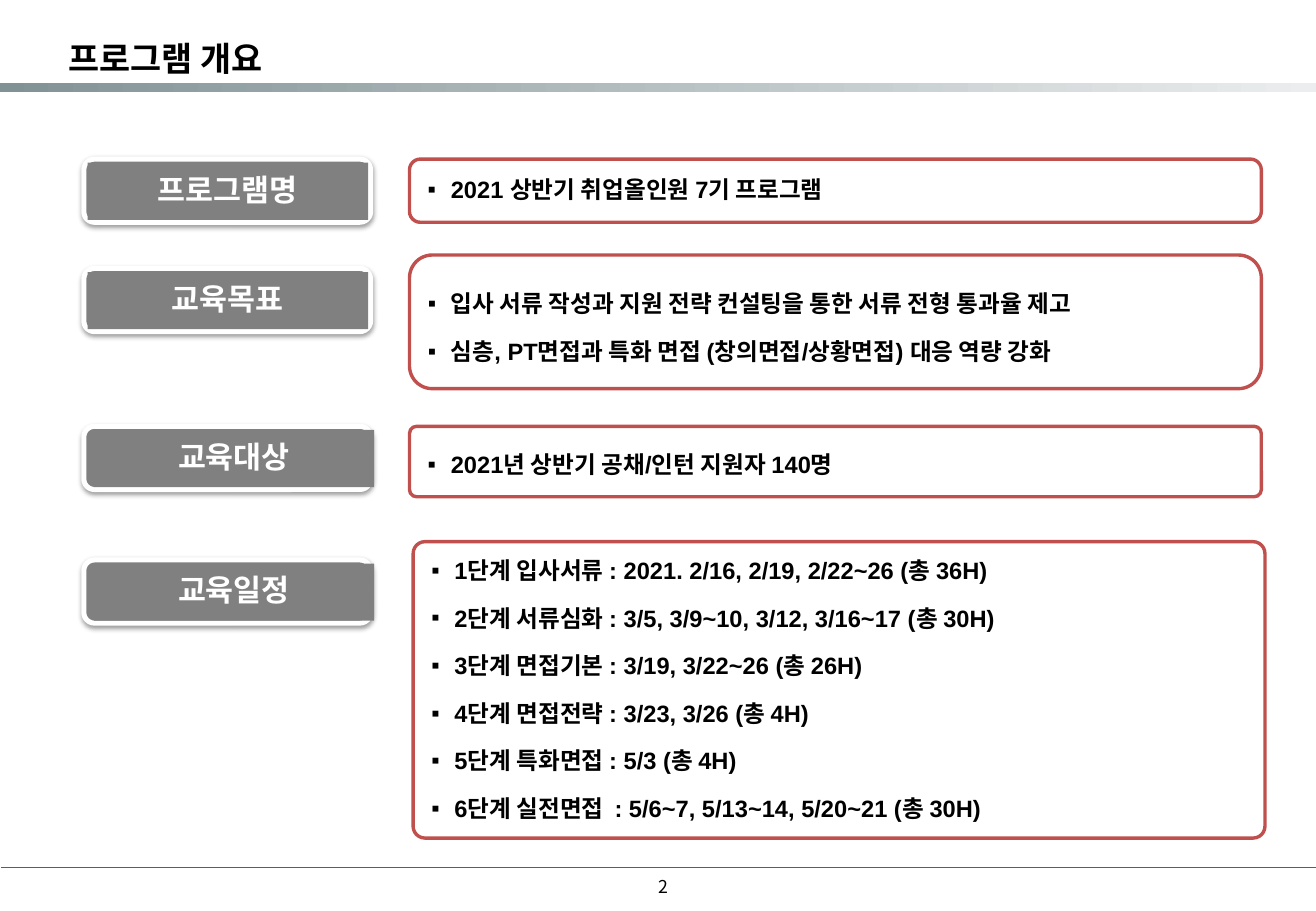
"""Build the programme overview slide."""
from lxml import etree
from pptx import Presentation
from pptx import util as u
from pptx.dml.color import RGBColor
from pptx.enum import shapes, text
from pptx.oxml import parse_xml
from pptx.oxml.ns import nsdecls, qn

KOREAN, LATIN = "Noto Sans CJK KR", "Arial"
BLACK, WHITE, GREY, RED, BLUE = "000000", "FFFFFF", "808080", "C0504D", "336699"
LEFT, CENTER, RIGHT = text.PP_ALIGN.LEFT, text.PP_ALIGN.CENTER, text.PP_ALIGN.RIGHT
RECT, ROUND = shapes.MSO_SHAPE.RECTANGLE, shapes.MSO_SHAPE.ROUNDED_RECTANGLE


def color(value):
    return RGBColor.from_string(value)


class Deck:
    def __init__(self, width, height):
        self.prs = Presentation()
        self.prs.slide_width, self.prs.slide_height = u.Inches(width), u.Inches(height)
        self.s = self.prs.slides.add_slide(self.prs.slide_layouts[5])

    def frame(self, sp, margins):
        tf = sp.text_frame
        tf.word_wrap = True
        tf.auto_size = text.MSO_AUTO_SIZE.NONE
        tf.vertical_anchor = text.MSO_ANCHOR.MIDDLE
        tf.margin_left, tf.margin_top, tf.margin_right, tf.margin_bottom = map(u.Inches, margins)
        return tf

    def run(self, p, words, size, font=KOREAN, ink=BLACK, bold=True, align=LEFT, spacing=1.0):
        p.alignment = align
        p.line_spacing = spacing
        r = p.add_run()
        r.text = words
        r.font.size, r.font.bold, r.font.name = u.Pt(size), bold, font
        r.font.color.rgb = color(ink)
        ea = etree.SubElement(r._r.get_or_add_rPr(), qn("a:ea"))
        ea.set("typeface", KOREAN)

    def shape(self, kind, box, fill, line=None, weight=0):
        sp = self.s.shapes.add_shape(kind, *map(u.Inches, box))
        sp.shadow.inherit = False
        sp.fill.solid()
        sp.fill.fore_color.rgb = color(fill)
        if line:
            sp.line.color.rgb = color(line)
            sp.line.width = u.Pt(weight)
        else:
            sp.line.fill.background()
        return sp

    def title(self, words, box):
        sp = self.s.shapes.title
        sp.left, sp.top, sp.width, sp.height = map(u.Inches, box)
        tf = self.frame(sp, (0.1, 0.1, 0.1, 0.1))
        self.run(tf.paragraphs[0], words, 20, spacing=1.1)

    def gradient_bar(self, box, start, end):
        sp = self.shape(RECT, box, start)
        sp.fill.gradient()
        sp.fill.gradient_angle = 0
        for stop, value in zip(sp.fill.gradient_stops, (start, end)):
            stop.color.rgb = color(value)

    def rule(self, left, right, top):
        ends = map(u.Inches, (left, top, right, top))
        cx = self.s.shapes.add_connector(shapes.MSO_CONNECTOR.STRAIGHT, *ends)
        cx.line.color.rgb = color(BLUE)
        cx.line.width = u.Pt(0.75)
        etree.SubElement(cx._element.spPr, qn("a:effectLst"))

    def page_number(self, words, box):
        sp = self.s.shapes.add_textbox(*map(u.Inches, box))
        tf = self.frame(sp, (0.1, 0.05, 0.1, 0.05))
        self.run(tf.paragraphs[0], words, 10.5, bold=False, align=RIGHT)

    def label(self, words, top, indent):
        rim = self.shape(ROUND, (0.69, top, 2.36, 0.52), GREY, WHITE, 3)
        effects = rim._element.spPr.find(qn("a:effectLst"))
        effects.append(parse_xml(
            f'<a:outerShdw {nsdecls("a")} blurRad="{u.Pt(3.1)}" dist="{u.Pt(1.6)}" '
            f'dir="5400000" rotWithShape="0"><a:srgbClr val="{BLACK}">'
            '<a:alpha val="38000"/></a:srgbClr></a:outerShdw>'))
        face = self.shape(RECT, (0.69 + indent, top + 0.03, 2.31, 0.47), GREY)
        tf = self.frame(face, (0.24, 0, 0.24, 0))
        self.run(tf.paragraphs[0], words, 18, ink=WHITE, align=CENTER, spacing=0.9)

    def card(self, lines, box, adj, spacing, before, drop):
        sp = self.shape(ROUND, box, WHITE, RED, 2)
        sp.adjustments[0] = adj
        side = 0.15 - 0.29 * adj * box[3]
        tf = self.frame(sp, (side, max(2 * drop, 0), side, max(-2 * drop, 0)))
        for i, words in enumerate(lines):
            p = tf.add_paragraph() if i else tf.paragraphs[0]
            self.run(p, words, 14, LATIN, spacing=spacing)
            p.space_before, p.space_after = u.Pt(before), u.Pt(2)
            pPr = p._p.get_or_add_pPr()
            pPr.set("marL", str(u.Inches(0.19)))
            pPr.set("indent", str(u.Inches(-0.19)))
            etree.SubElement(pPr, qn("a:buFont")).set("typeface", LATIN)
            etree.SubElement(pPr, qn("a:buChar")).set("char", "▪")


def main():
    deck = Deck(10.83, 7.5)
    deck.gradient_bar((-0.01, 0.68, 10.84, 0.08), "819295", "EBEDEE")
    deck.rule(0.01, 10.83, 7.14)
    deck.page_number("2", (3.07, 7.1, 2.53, 0.4))
    deck.title("프로그램 개요", (0.46, 0.23, 5.72, 0.47))

    for words, top, indent in (("프로그램명", 1.31, 0.03), ("교육목표", 2.21, 0.03),
                               ("교육대상", 3.51, 0.08), ("교육일정", 4.61, 0.08)):
        deck.label(words, top, indent)

    deck.card(["2021 상반기 취업올인원 7기 프로그램"],
              (3.37, 1.31, 7.01, 0.52), 0.17, 0.9, 0, 0)
    deck.card(["입사 서류 작성과 지원 전략 컨설팅을 통한 서류 전형 통과율 제고",
               "심층, PT면접과 특화 면접 (창의면접/상황면접) 대응 역량 강화"],
              (3.37, 2.1, 7.01, 1.1), 0.17, 1.2, 6, 0.02)
    deck.card(["2021년 상반기 공채/인턴 지원자 140명"],
              (3.37, 3.51, 7.01, 0.58), 0.1, 1.2, 6, 0)
    stages = ["입사서류 : 2021. 2/16, 2/19, 2/22~26 (총 36H)",
              "서류심화 : 3/5, 3/9~10, 3/12, 3/16~17 (총 30H)",
              "면접기본 : 3/19, 3/22~26 (총 26H)",
              "면접전략 : 3/23, 3/26 (총 4H)",
              "특화면접 : 5/3 (총 4H)",
              "실전면접  : 5/6~7, 5/13~14, 5/20~21 (총 30H)"]
    deck.card([f"{n}단계 {stage}" for n, stage in enumerate(stages, 1)],
              (3.4, 4.46, 7.01, 2.44), 0.04, 1.2, 6, -0.03)
    deck.prs.save("out.pptx")


if __name__ == "__main__":
    main()
